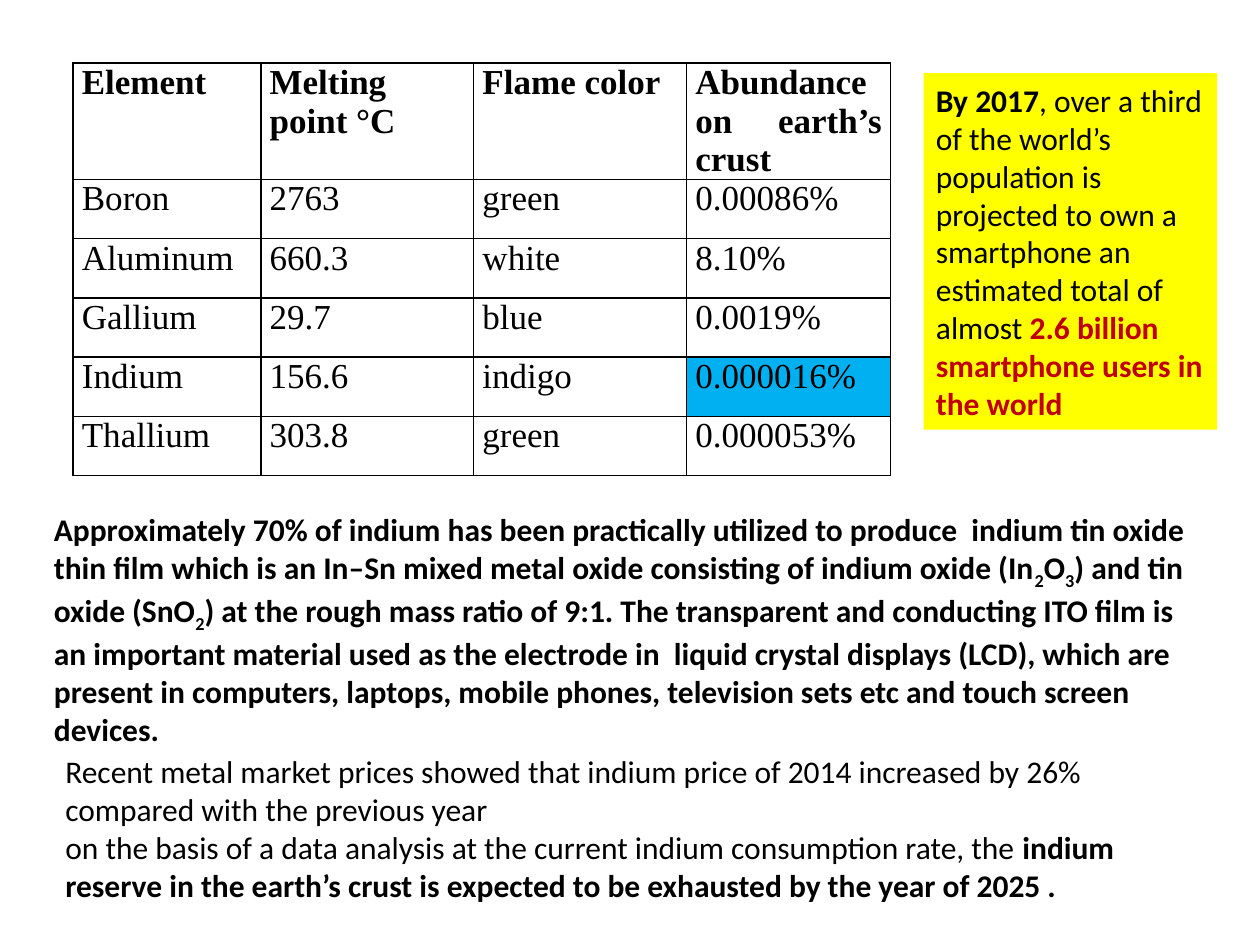
from lxml import etree
from pptx import Presentation
from pptx.dml.color import RGBColor
from pptx.enum.shapes import MSO_SHAPE
from pptx.enum.text import MSO_ANCHOR, MSO_AUTO_SIZE, PP_ALIGN
from pptx.oxml.ns import qn
from pptx.util import Inches, Pt

RECTANGLE = MSO_SHAPE.RECTANGLE
TOP, MIDDLE = MSO_ANCHOR.TOP, MSO_ANCHOR.MIDDLE
LEFT, JUSTIFY = PP_ALIGN.LEFT, PP_ALIGN.JUSTIFY
FIT_SHAPE = MSO_AUTO_SIZE.SHAPE_TO_FIT_TEXT

BLACK, RED, YELLOW, BLUE = "000000", "C00000", "FFFF00", "00B0F0"
PLAIN, BOLD, SUB, ALERT = {}, {"bold": True}, {"bold": True, "sub": True}, {"bold": True, "color": RED}

ELEMENTS = [
    ("Element", "Melting point °C", "Flame color", "Abundance on earth’s crust"),
    ("Boron", "2763", "green", "0.00086%"),
    ("Aluminum", "660.3", "white", "8.10%"),
    ("Gallium", "29.7", "blue", "0.0019%"),
    ("Indium", "156.6", "indigo", "0.000016%"),
    ("Thallium", "303.8", "green", "0.000053%"),
]
COLUMN_WIDTHS = (1.49, 1.69, 1.69, 1.62)
ROW_HEIGHT = 0.47
HIGHLIGHT = "0.000016%"

USES = [[
    ("Approximately 70% of indium has been practically utilized to produce  indium tin oxide  "
     "thin film which is an In–Sn mixed metal oxide consisting of indium oxide (In", BOLD),
    ("2", SUB), ("O", BOLD), ("3", SUB), (") and tin oxide (SnO", BOLD), ("2", SUB),
    (") at the rough mass ratio of 9:1. The transparent and conducting ITO film is an important "
     "material used as the electrode in  liquid crystal displays (LCD), which are present in "
     "computers, laptops, mobile phones, television sets etc and touch screen devices.", BOLD),
]]
SUPPLY = [
    [("Recent metal market prices showed that indium price of 2014 increased by 26% "
      "compared with the previous year", PLAIN)],
    [("on the basis of a data analysis at the current indium consumption rate, the ", PLAIN),
     ("indium reserve in the earth’s crust is expected to be exhausted by the year of 2025 .", BOLD)],
]
SMARTPHONES = [[
    ("By 2017", BOLD),
    (", over a third of the world’s population is projected to own a smartphone "
     "an estimated total of almost ", PLAIN),
    ("2.6 billion smartphone users in the world", ALERT),
]]


def rgb(color):
    return RGBColor.from_string(color)


def style(span, size, font, bold=False, color=BLACK, sub=False):
    span.font.size = Pt(size)
    span.font.name = font
    span.font.bold = bold
    span.font.color.rgb = rgb(color)
    if sub:
        span._r.get_or_add_rPr().set("baseline", "-25000")


def write(shape, paragraphs, anchor=TOP):
    frame = shape.text_frame
    frame.word_wrap = True
    frame.auto_size = FIT_SHAPE
    frame.vertical_anchor = anchor
    for index, spans in enumerate(paragraphs):
        para = frame.add_paragraph() if index else frame.paragraphs[0]
        para.alignment = LEFT
        for text, look in spans:
            span = para.add_run()
            span.text = text
            style(span, 18, "Calibri", **look)


def outline(cell):
    properties = cell._tc.get_or_add_tcPr()
    for index, side in enumerate(("lnL", "lnR", "lnT", "lnB")):
        line = etree.Element(qn("a:" + side), w=str(Pt(1)))
        fill = etree.SubElement(line, qn("a:solidFill"))
        etree.SubElement(fill, qn("a:srgbClr"), val=BLACK)
        properties.insert(index, line)


def add_elements(page):
    height = ROW_HEIGHT * len(ELEMENTS)
    table = page.shapes.add_table(
        len(ELEMENTS), len(COLUMN_WIDTHS), Inches(0.58), Inches(0.5),
        Inches(sum(COLUMN_WIDTHS)), Inches(height)).table
    table.first_row = table.horz_banding = False
    for column, width in zip(table.columns, COLUMN_WIDTHS):
        column.width = Inches(width)
    for row, values in enumerate(ELEMENTS):
        table.rows[row].height = Inches(ROW_HEIGHT)
        for column, value in enumerate(values):
            cell = table.cell(row, column)
            cell.margin_left = cell.margin_right = Inches(0.07)
            cell.margin_top = cell.margin_bottom = 0
            para = cell.text_frame.paragraphs[0]
            para.text = value
            para.alignment = JUSTIFY
            style(para.runs[0], 20, "Times New Roman", bold=row == 0)
            if value == HIGHLIGHT:
                cell.fill.solid()
                cell.fill.fore_color.rgb = rgb(BLUE)
            else:
                cell.fill.background()
            outline(cell)


def main():
    deck = Presentation()
    deck.slide_width, deck.slide_height = Inches(10), Inches(7.5)
    page = deck.slides.add_slide(deck.slide_layouts[6])
    add_elements(page)
    for place, paragraphs in (((0.33, 4, 9.33, 1.92), USES), ((0.42, 5.92, 9.17, 1.31), SUPPLY)):
        write(page.shapes.add_textbox(*map(Inches, place)), paragraphs)
    callout = page.shapes.add_shape(RECTANGLE, *map(Inches, (7.33, 0.58, 2.33, 2.83)))
    callout.shadow.inherit = False
    callout.fill.solid()
    callout.fill.fore_color.rgb = rgb(YELLOW)
    callout.line.fill.background()
    write(callout, SMARTPHONES, MIDDLE)
    deck.save("out.pptx")


if __name__ == "__main__":
    main()
